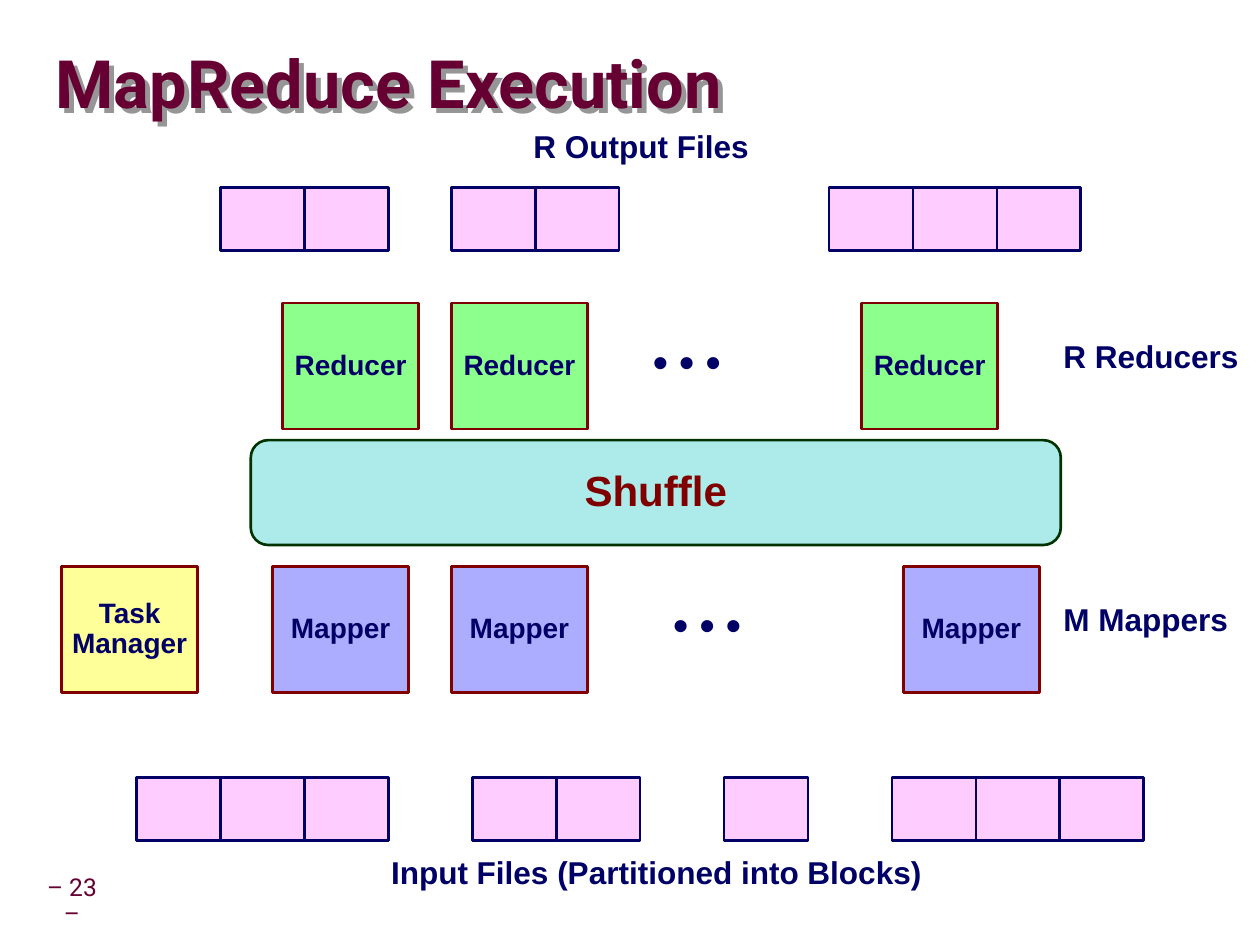
from lxml.etree import SubElement
from pptx import Presentation
from pptx.dml.color import RGBColor
from pptx.enum.shapes import MSO_SHAPE
from pptx.enum.text import MSO_ANCHOR, MSO_AUTO_SIZE, PP_ALIGN
from pptx.oxml.ns import qn
from pptx.util import Cm, Pt

PLUM = RGBColor(0x66, 0x00, 0x33)
NAVY = RGBColor(0x00, 0x00, 0x66)
MAROON = RGBColor(0x80, 0x00, 0x00)
FOREST = RGBColor(0x00, 0x33, 0x00)
YELLOW = RGBColor(0xFF, 0xFF, 0x99)
LAVENDER = RGBColor(0xAD, 0xAD, 0xFF)
PINK = RGBColor(0xFF, 0xCC, 0xFF)
GREEN = RGBColor(0x8C, 0xFF, 0x8C)
AQUA = RGBColor(0xAD, 0xEB, 0xEB)

BLOCK_WIDTH, BLOCK_HEIGHT = 1.69, 1.27
TASK_WIDTH, TASK_HEIGHT = 2.74, 2.54


def write(shape, text, size, color=NAVY, font="Arial", bold=True,
          align=PP_ALIGN.CENTER, spacing=0.9):
    """Put one formatted paragraph into a shape."""
    shape.text_frame.text = text
    para = shape.text_frame.paragraphs[0]
    para.alignment = align
    para.line_spacing = spacing
    for span in para.runs:
        span.font.name = font
        span.font.size = Pt(size)
        span.font.bold = bold
        span.font.color.rgb = color


def set_margins(frame, horizontal, vertical):
    """Set the insets of a text frame in centimetres."""
    frame.margin_left = frame.margin_right = Cm(horizontal)
    frame.margin_top = frame.margin_bottom = Cm(vertical)


def add_box(page, left, top, width, height, fill, line, kind=MSO_SHAPE.RECTANGLE):
    """Add a filled and outlined preset shape."""
    box = page.shapes.add_shape(kind, Cm(left), Cm(top), Cm(width), Cm(height))
    box.shadow.inherit = False
    box.fill.solid()
    box.fill.fore_color.rgb = fill
    box.line.color.rgb = line
    box.line.width = Pt(1.5)
    box.text_frame.vertical_anchor = MSO_ANCHOR.MIDDLE
    set_margins(box.text_frame, 0.13, 0.13)
    return box


def add_label(page, text, left, top, width, height=0.97, size=18, align=PP_ALIGN.LEFT):
    """Add a free-standing line of text."""
    label = page.shapes.add_textbox(Cm(left), Cm(top), Cm(width), Cm(height))
    label.text_frame.word_wrap = False
    write(label, text, size, align=align)


def add_title(page, text, left, top, width, height):
    """Place the title and give its letters a hard grey shadow."""
    title = page.shapes.title
    title.left, title.top, title.width, title.height = map(Cm, (left, top, width, height))
    frame = title.text_frame
    frame.auto_size = MSO_AUTO_SIZE.NONE
    frame.vertical_anchor = MSO_ANCHOR.MIDDLE
    set_margins(frame, 0, 0)
    write(title, text, 38, PLUM, "Roboto", align=PP_ALIGN.LEFT, spacing=0.87)
    effects = SubElement(title.element.spPr, qn("a:effectLst"))
    shadow = SubElement(effects, qn("a:outerShdw"), dist="50000", dir="2700000")
    SubElement(shadow, qn("a:srgbClr"), val="969696")


def add_page_number(page, text, left, top, width, height):
    """Place the page number in the lower left corner."""
    number = page.shapes.add_textbox(Cm(left), Cm(top), Cm(width), Cm(height))
    number.text_frame.word_wrap = True
    number.text_frame.vertical_anchor = MSO_ANCHOR.MIDDLE
    set_margins(number.text_frame, 0.2, 0.13)
    write(number, text, 14, PLUM, "Roboto", bold=False)


def add_files(page, left, top, files):
    """Draw files as (first column, block count) runs on the block grid."""
    for first, count in files:
        for column in range(count):
            add_box(page, left + (first + column) * BLOCK_WIDTH, top,
                    BLOCK_WIDTH, BLOCK_HEIGHT, PINK, NAVY)


def add_tasks(page, top, name, lefts, fill):
    """Draw a row of equal task boxes."""
    for left in lefts:
        box = add_box(page, left, top, TASK_WIDTH, TASK_HEIGHT, fill, MAROON)
        write(box, name, 16)


def add_stage(page, top, name, lefts, fill, dots_left, caption, caption_width):
    """Draw a stage: its tasks, the ellipsis and the caption at the right."""
    add_tasks(page, top, name, lefts, fill)
    add_label(page, "• • •", dots_left, top + 0.64, 3.4, 1.19, 24)
    add_label(page, caption, 21.16, top + 0.64, caption_width)


def add_shuffle(page, left, top, width, height):
    """Draw the shuffle bar between the two stages."""
    bar = add_box(page, left, top, width, height, AQUA, FOREST,
                  MSO_SHAPE.ROUNDED_RECTANGLE)
    write(bar, "Shuffle", 24, MAROON)


def main():
    """Build the deck and save it."""
    deck = Presentation()
    deck.slide_width, deck.slide_height = Cm(25.37), Cm(19.02)
    page = deck.slides.add_slide(deck.slide_layouts[5])

    add_page_number(page, "– 23 –", 0.61, 17.75, 1.68, 0.79)
    add_title(page, "MapReduce Execution", 1.12, 0.69, 24.18, 2.16)

    add_tasks(page, 11.4, "Task Manager", [1.24], YELLOW)
    add_stage(page, 11.4, "Mapper", [5.49, 9.09, 18.19], LAVENDER,
              13.31, "M Mappers", 3.86)
    add_files(page, 2.75, 15.65, [(0, 3), (4, 2), (7, 1), (9, 3)])
    add_label(page, "Input Files (Partitioned into Blocks)", 7.57, 17.12, 11.3,
              align=PP_ALIGN.CENTER)

    add_stage(page, 6.1, "Reducer", [5.69, 9.09, 17.35], GREEN,
              12.9, "R Reducers", 4.06)
    add_shuffle(page, 5.05, 8.86, 16.31, 2.11)
    add_files(page, 2.75, 3.78, [(1, 2), (3.75, 2), (8.25, 3)])
    add_label(page, "R Output Files", 10.46, 2.51, 4.9, align=PP_ALIGN.CENTER)

    deck.save("out.pptx")


if __name__ == "__main__":
    main()
